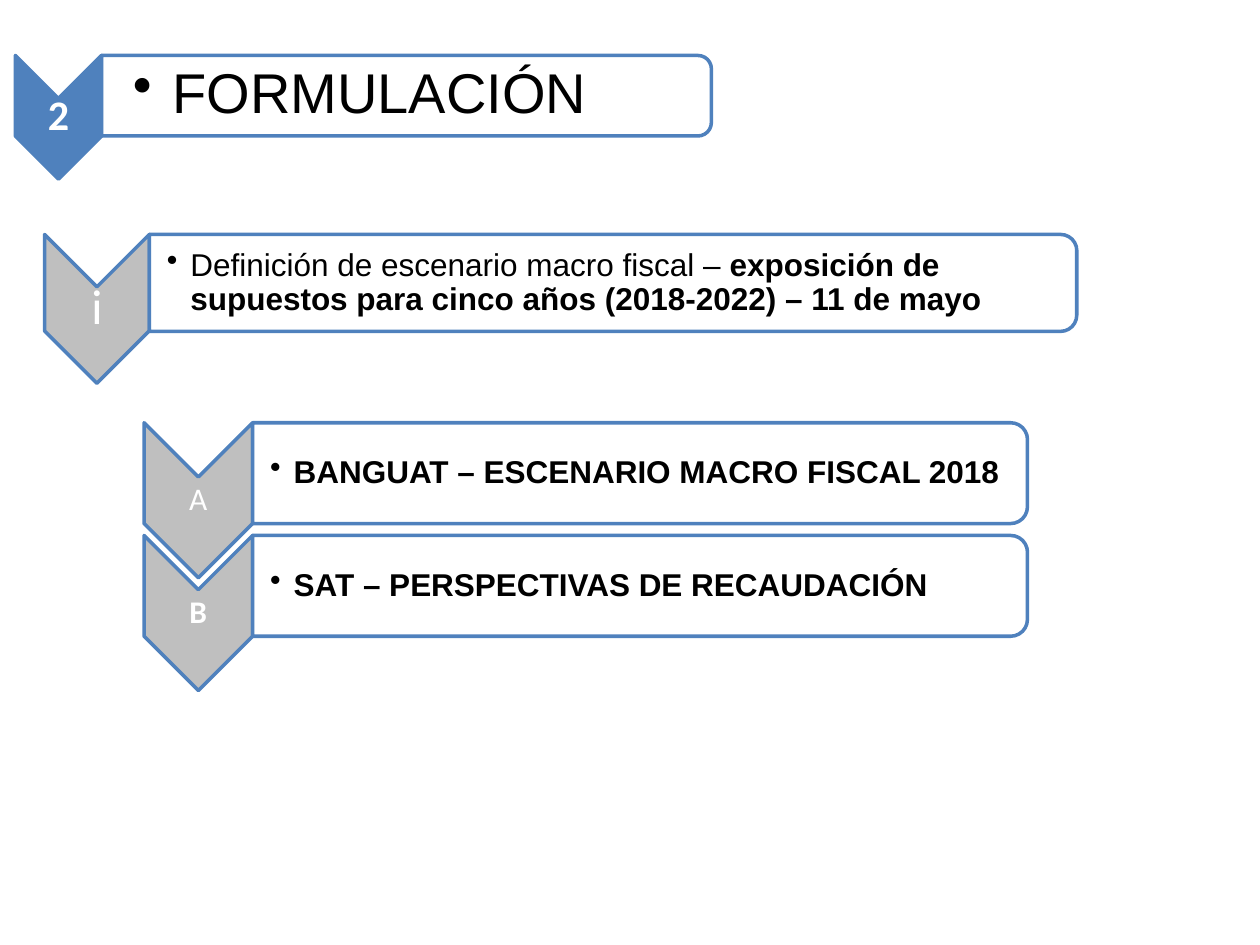
from lxml.etree import SubElement as Sub
from pptx import Presentation
from pptx.dml.color import RGBColor
from pptx.enum.shapes import MSO_SHAPE as Shape
from pptx.enum.text import MSO_ANCHOR as Anchor, PP_ALIGN as Align
from pptx.oxml.ns import qn
from pptx.util import Pt

BLUE = RGBColor(0x4F, 0x81, 0xBD)
GRAY = RGBColor(0xBF, 0xBF, 0xBF)
WHITE = RGBColor(0xFF, 0xFF, 0xFF)
BLACK = RGBColor(0, 0, 0)


class Deck:
    """Style and current slide; all lengths are in points."""

    def __init__(self):
        self.prs = Presentation()
        self.prs.slide_width, self.prs.slide_height = Pt(720), Pt(540)
        self.slide = self.prs.slides.add_slide(self.prs.slide_layouts[6])

    def turned(self, kind, x, y, w, h, fill):
        """Add a shape turned a quarter that covers the box x, y, w, h."""
        left, top = x + (w - h) / 2, y + (h - w) / 2
        shape = self.slide.shapes.add_shape(kind, Pt(left), Pt(top), Pt(h), Pt(w))
        shape.rotation = 90
        shape.shadow.inherit = False
        shape.fill.solid()
        shape.fill.fore_color.rgb = fill
        shape.line.color.rgb = BLUE
        shape.line.width = Pt(2)
        return shape

    def text(self, x, y, w, h, runs, size, font, color, pad=1, inset=1, hang=0):
        """Add one paragraph of (words, bold) runs, bulleted if it hangs."""
        box = self.slide.shapes.add_textbox(Pt(x), Pt(y), Pt(w), Pt(h))
        frame = box.text_frame
        frame.word_wrap = True
        frame.vertical_anchor = Anchor.MIDDLE
        frame.margin_left = Pt(inset)
        frame.margin_top = frame.margin_right = frame.margin_bottom = Pt(pad)
        par = frame.paragraphs[0]
        par.line_spacing = 0.9
        if hang:
            par.level = 1
            props = par._p.get_or_add_pPr()
            props.set("marL", str(Pt(hang)))
            props.set("indent", str(-Pt(hang)))
            Sub(props, qn("a:buChar")).set("char", "•")
        else:
            par.alignment = Align.CENTER
        for words, bold in runs:
            run = par.add_run()
            run.text = words
            run.font.size, run.font.name, run.font.bold = Pt(size), font, bold
            run.font.color.rgb = color

    def chevron(self, x, y, w, h, mark, size, bold, fill):
        """Add a chevron that points down, with its mark below the notch."""
        self.turned(Shape.CHEVRON, x, y, w, h, fill)
        self.text(x, y + w / 2, w, h - w, [(mark, bold)], size, "Calibri", WHITE)

    def bar(self, x, y, w, h, runs, size, inset, hang):
        """Add a bar rounded on the right, with a bulleted line."""
        shape = self.turned(Shape.ROUND_2_SAME_RECTANGLE, x, y, w, h, WHITE)
        tint = shape.fill._xPr.find(qn("a:solidFill"))[0]
        Sub(tint, qn("a:alpha")).set("val", "90000")
        self.text(x, y + 2.5, w - 2.5, h - 5, runs, size, "Arial", BLACK,
                  inset=inset, hang=hang)

    def row(self, x, y, head, body, mark, runs, size=18, bold=False,
            fill=GRAY, words=18, inset=10, hang=13.5):
        """Add a chevron and the bar that starts at its right edge."""
        self.chevron(x, y, *head, mark, size, bold, fill)
        self.bar(x + head[0], y, *body, runs, words, inset, hang)


def main():
    deck = Deck()

    # Stage title
    deck.row(8.8, 31.7, (49.2, 70.7), (348.5, 46), "2", [("FORMULACIÓN", False)],
             size=24, bold=True, fill=BLUE, words=32, inset=18, hang=22.5)

    # Step
    deck.row(25.5, 134, (59.8, 85), (530, 55.4), "i",
             [("Definición de escenario macro fiscal – ", False),
              ("exposición de supuestos para cinco años (2018-2022) – 11 de mayo",
               True)], size=28)

    # Parts of the step
    parts = [("A", False, "BANGUAT – ESCENARIO MACRO FISCAL 2018"),
             ("B", True, "SAT – PERSPECTIVAS DE RECAUDACIÓN")]
    for i, (mark, bold, words) in enumerate(parts):
        deck.row(82.3, 241.6 + 64.4 * i, (62, 88.6), (442.8, 57.6), mark,
                 [(words, True)], bold=bold)

    deck.prs.save("out.pptx")


if __name__ == "__main__":
    main()
